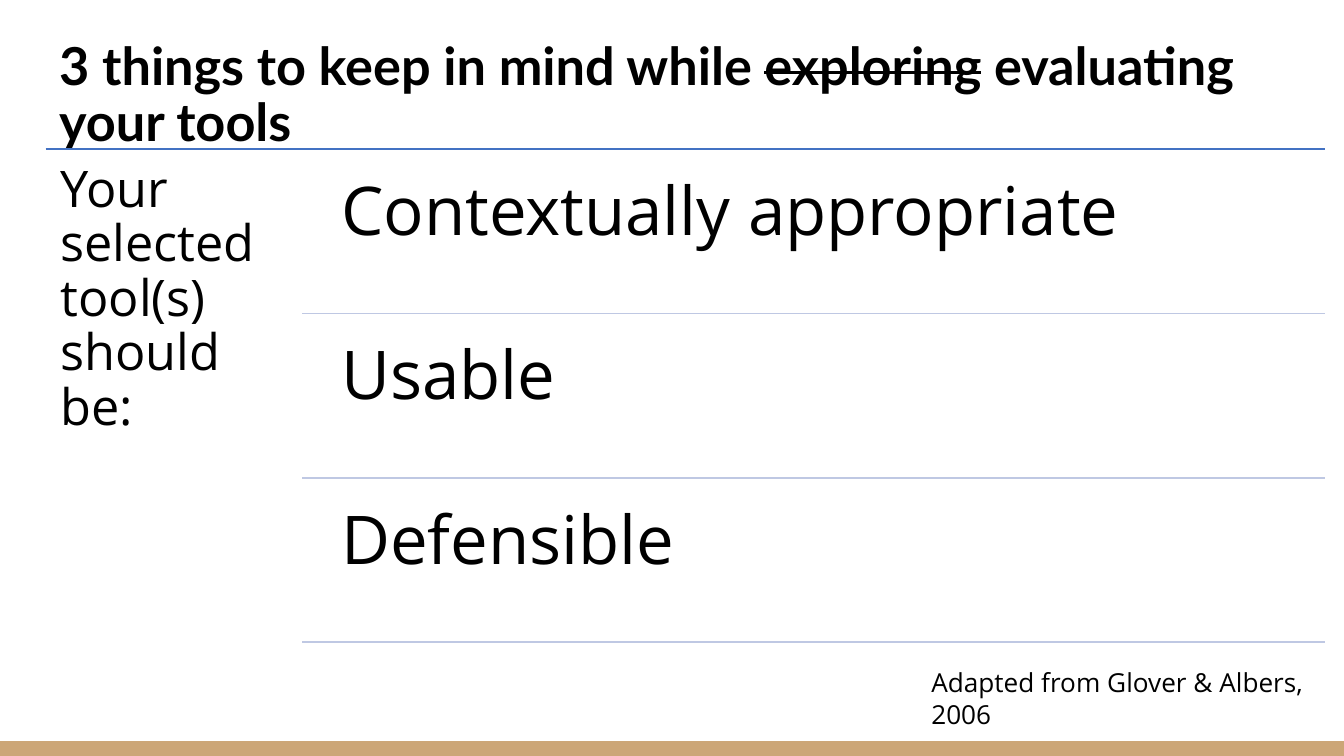
from lxml import etree
from pptx import Presentation
from pptx.dml.color import RGBColor
from pptx.enum.shapes import MSO_CONNECTOR, MSO_SHAPE
from pptx.enum.text import MSO_ANCHOR, MSO_AUTO_SIZE, PP_ALIGN
from pptx.oxml.ns import qn
from pptx.util import Inches, Pt

STRAIGHT = MSO_CONNECTOR.STRAIGHT
RECTANGLE = MSO_SHAPE.RECTANGLE
TOP = MSO_ANCHOR.TOP
LEFT = PP_ALIGN.LEFT
NO_FIT = MSO_AUTO_SIZE.NONE

BLACK = RGBColor(0x00, 0x00, 0x00)
TAN = RGBColor(0xCC, 0xA6, 0x77)
BLUE = RGBColor(0x43, 0x72, 0xC3)
PALE_BLUE = RGBColor(0xBF, 0xC8, 0xE3)

# Content: title parts are (text, struck through)
TITLE = [
    ("3 things to keep in mind while ", False),
    ("exploring", True),
    (" evaluating your tools", False),
]
LEAD = "Your selected tool(s) should be:"
QUALITIES = ["Contextually appropriate", "Usable", "Defensible"]
CREDIT = "Adapted from Glover & Albers, 2006"

# Layout in inches, on a 16:9 page
PAGE_WIDTH = 10
PAGE_HEIGHT = PAGE_WIDTH * 9 / 16
BAND_HEIGHT = 0.11
LIST_LEFT, LIST_RIGHT = 0.34, 9.86
LIST_TOP, LIST_BOTTOM = 1.11, 4.78
RULE_LEFT, QUALITY_LEFT = 2.25, 2.39
ROW_HEIGHT = (LIST_BOTTOM - LIST_TOP) / len(QUALITIES)
ROW_GAP = 0.06


def format_text(box, font_name, size, inset_x, inset_y, spacing, bold=False):
    frame = box.text_frame
    frame.word_wrap = True
    frame.auto_size = NO_FIT
    frame.vertical_anchor = TOP
    frame.margin_left = frame.margin_right = Inches(inset_x)
    frame.margin_top = frame.margin_bottom = Inches(inset_y)
    para = frame.paragraphs[0]
    para.alignment = LEFT
    para.line_spacing = spacing
    para.font.name = font_name
    para.font.size = Pt(size)
    para.font.bold = bold
    para.font.color.rgb = BLACK


def add_text(page, text, left, top, width, height, size, inset_x, inset_y, spacing=0.9):
    box = page.shapes.add_textbox(Inches(left), Inches(top), Inches(width), Inches(height))
    box.text_frame.text = text
    format_text(box, "Open Sans", size, inset_x, inset_y, spacing)


def add_rule(page, left, y, color):
    rule = page.shapes.add_connector(
        STRAIGHT, Inches(left), Inches(y), Inches(LIST_RIGHT), Inches(y))
    rule.line.color.rgb = color
    rule.line.width = Pt(1)
    etree.SubElement(rule._element.spPr, qn("a:effectLst"))


deck = Presentation()
deck.slide_width, deck.slide_height = Inches(PAGE_WIDTH), Inches(PAGE_HEIGHT)
page = deck.slides.add_slide(deck.slide_layouts[5])

# Title
title = page.shapes.title
title.left, title.top = Inches(0.34), Inches(0.2)
title.width, title.height = Inches(9.32), Inches(0.63)
for text, struck in TITLE:
    span = title.text_frame.paragraphs[0].add_run()
    span.text = text
    if struck:
        span._r.get_or_add_rPr().set("strike", "sngStrike")
format_text(title, "Lato", 28, 0.1, 0.1, 0.9, bold=True)

# Bottom band
band = page.shapes.add_shape(
    RECTANGLE, 0, Inches(PAGE_HEIGHT - BAND_HEIGHT), Inches(PAGE_WIDTH), Inches(BAND_HEIGHT))
band.shadow.inherit = False
band.fill.solid()
band.fill.fore_color.rgb = TAN
band.line.fill.background()

# Lead-in and the ruled list of qualities
add_rule(page, LIST_LEFT, LIST_TOP, BLUE)
add_text(page, LEAD, LIST_LEFT, LIST_TOP, 1.9, 3.73, 27, 0.11, 0.11)
for index, quality in enumerate(QUALITIES):
    row_top = LIST_TOP + index * ROW_HEIGHT
    add_text(page, quality, QUALITY_LEFT, row_top + ROW_GAP,
             LIST_RIGHT - QUALITY_LEFT, ROW_HEIGHT - ROW_GAP, 36, 0.15, 0.15)
    add_rule(page, RULE_LEFT, row_top + ROW_HEIGHT, PALE_BLUE)

# Credit
add_text(page, CREDIT, 6.86, 4.92, 2.96, 0.55, 14, 0.07, 0.04, spacing=1.0)

deck.save("out.pptx")
